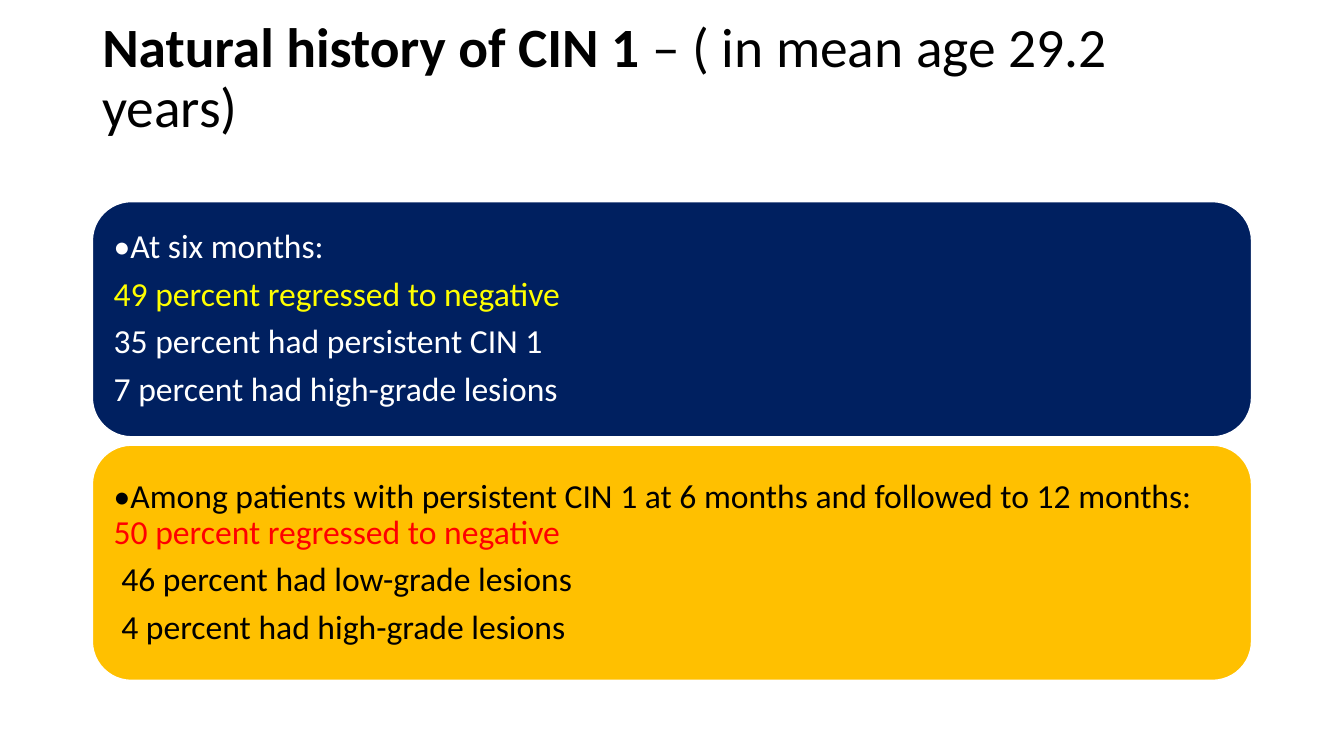
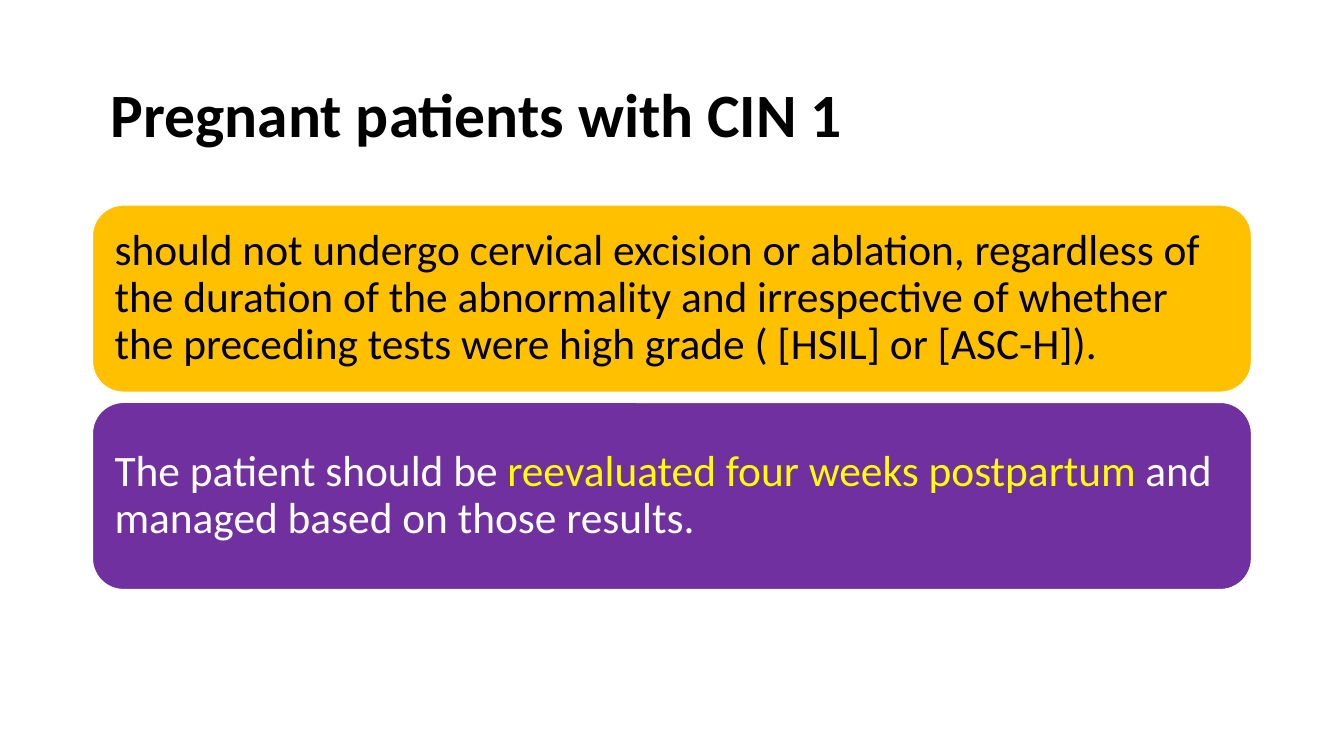
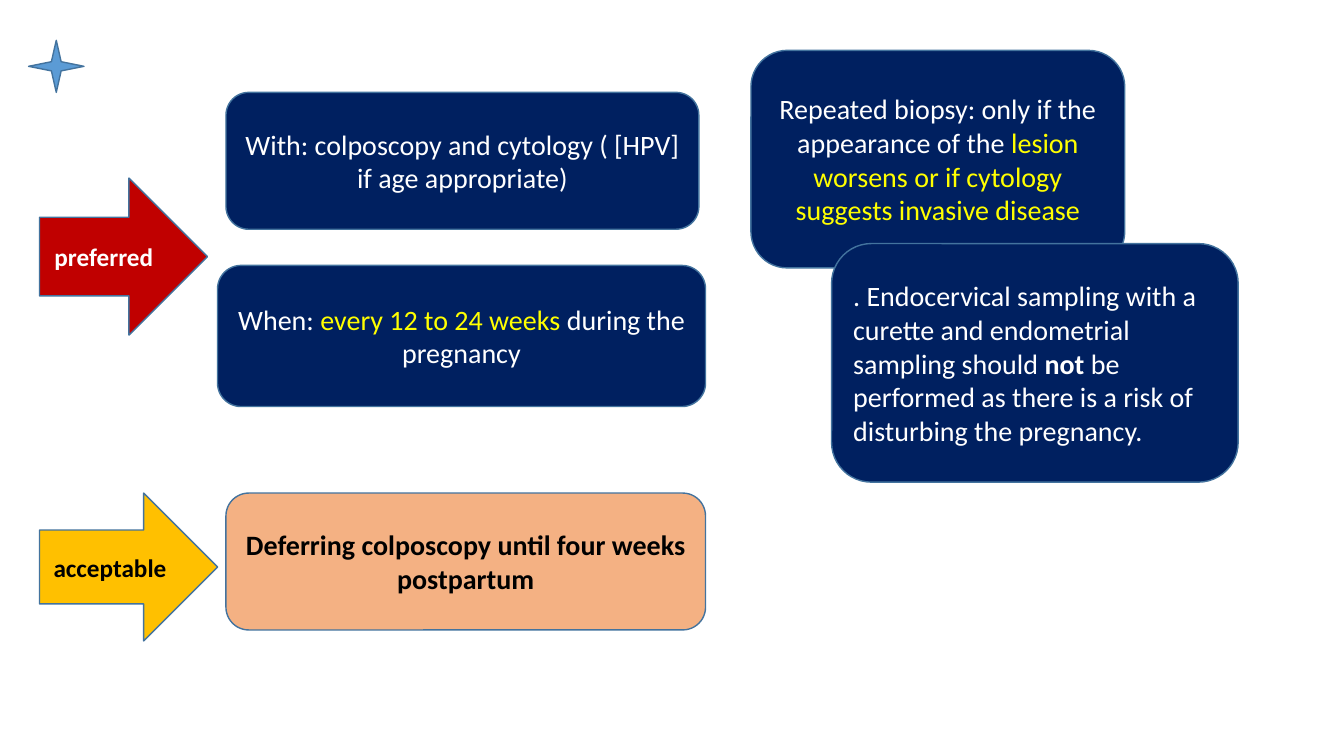
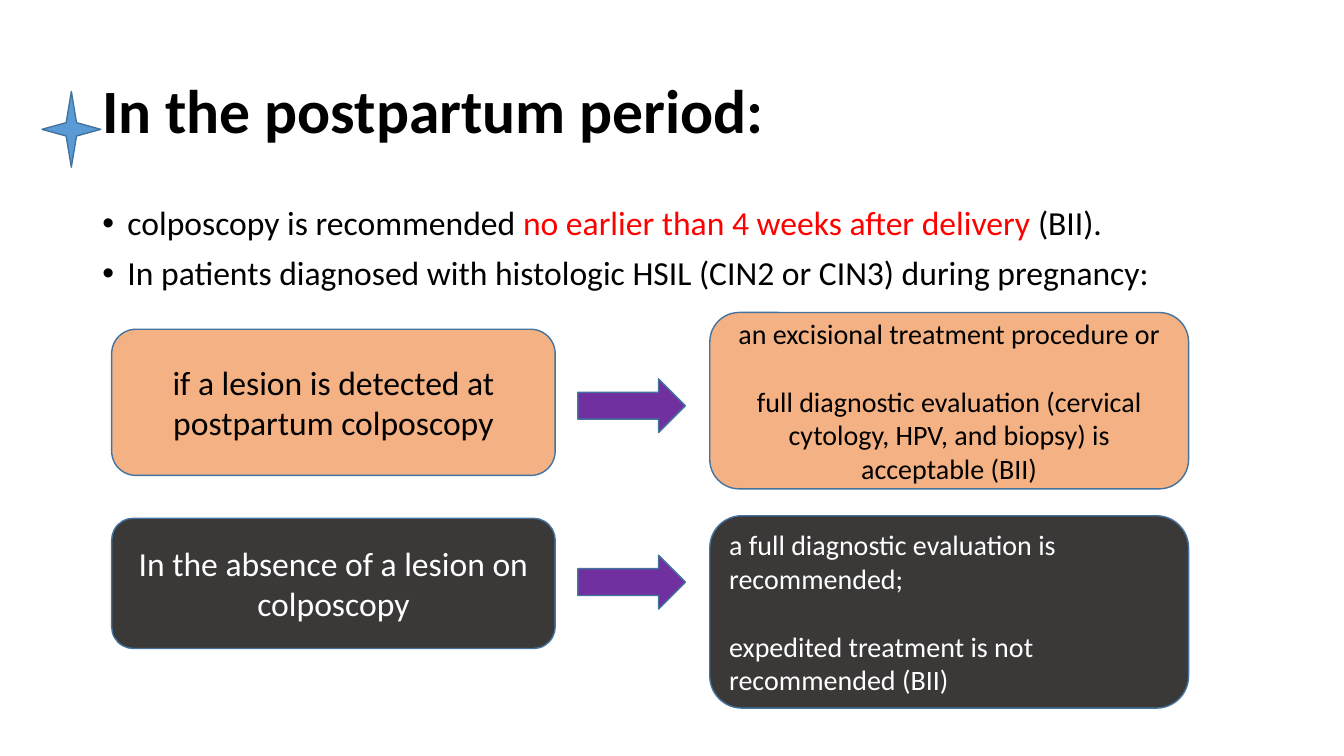
import pptx
import pptx.util
import pptx.dml.color
import pptx.enum.shapes
import pptx.enum.text
import pptx.oxml
import pptx.oxml.ns

# Shared look: a grid of 160 columns by 90 rows, twelve cells to the inch
COLUMNS, ROWS = 160, 90
CELL = pptx.util.Inches(1) / 12
FONT = "Calibri"
COLORS = {
    "black": "000000", "white": "FFFFFF", "yellow": "FFFF00", "red": "FF0000",
    "navy": "002060", "gold": "FFC000", "purple": "7030A0", "crimson": "C00000",
    "peach": "F4B183", "charcoal": "3B3838", "sky": "5B9BD5", "outline": "43739E",
}
SHAPE = pptx.enum.shapes.MSO_SHAPE
ALIGN = pptx.enum.text.PP_ALIGN
LEFT, WIDTH = 11, 138
TITLE_HEIGHT = 17.4

# Content: a paragraph is a list of spans; a span is text or (text, colour or "bold")
HISTORY_TITLE = [("Natural history of CIN 1", "bold"), " – ( in mean age 29.2 years)"]
HISTORY_CARDS = [
    ("navy", "white", [
        ["•At six months:"],
        [("49 percent regressed to negative", "yellow")],
        ["35 percent had persistent CIN 1"],
        ["7 percent had high-grade lesions"],
    ]),
    ("gold", "black", [
        ["•Among patients with persistent CIN 1 at 6 months and followed to 12 months: ",
         ("50 percent regressed to negative", "red")],
        [" 46 percent had low-grade lesions"],
        [" 4 percent had high-grade lesions"],
    ]),
]

PREGNANT_TITLE = [("Pregnant patients with CIN 1", "bold")]
PREGNANT_CARDS = [
    ("gold", "black", [
        ["should not undergo cervical excision or ablation, regardless of the duration "
         "of the abnormality and irrespective of whether the preceding tests were high "
         "grade ( [HSIL] or [ASC-H])."],
    ]),
    ("purple", "white", [
        ["The patient should be ", ("reevaluated four weeks postpartum ", "yellow"),
         "and managed based on those results."],
    ]),
]

# Options: (place, fill, text colour, alignment, spans)
OPTION_ARROWS = [
    ((4.7, 21.2, 20, 18.7), "crimson", "white", "preferred"),
    ((4.7, 58.7, 21.2, 17.6), "gold", "black", "acceptable"),
]
OPTION_BOXES = [
    ((26.9, 11, 56.3, 16.3), "navy", "white", ALIGN.CENTER,
     ["With: colposcopy and cytology ( [HPV] if age appropriate)"]),
    ((25.9, 31.6, 58.1, 16.8), "navy", "white", ALIGN.CENTER,
     ["When: ", ("every 12 to 24 weeks ", "yellow"), "during the pregnancy"]),
    ((89.4, 6, 44.5, 25.9), "navy", "white", ALIGN.CENTER,
     ["Repeated biopsy: only if the appearance of the ",
      ("lesion worsens or if cytology suggests invasive disease", "yellow")]),
    ((99, 29, 48.4, 28.4), "navy", "white", ALIGN.LEFT,
     [". Endocervical sampling with a curette and endometrial sampling should ",
      ("not", "bold"),
      " be performed as there is a risk of disturbing the pregnancy."]),
    ((26.9, 58.7, 57.1, 16.3), "peach", "black", ALIGN.CENTER,
     [("Deferring colposcopy until four weeks postpartum", "bold")]),
]

POSTPARTUM_TITLE = [("In the postpartum period:", "bold")]
POSTPARTUM_BULLETS = [
    ["colposcopy is recommended ", ("no earlier than 4 weeks after delivery ", "red"),
     "(BII)."],
    ["In patients diagnosed with histologic HSIL (CIN2 or CIN3) during pregnancy:"],
]
# Each finding leads to an action; rows are (top, height)
POSTPARTUM_ROWS = [
    {"fill": "peach", "ink": "black", "align": ALIGN.CENTER, "arrow_top": 45.1,
     "finding_rows": (39.2, 17.4), "action_rows": (37.2, 21),
     "finding": ["if a lesion is detected at postpartum colposcopy"],
     "action": [["an excisional treatment procedure or"],
                ["full diagnostic evaluation (cervical cytology, HPV, and biopsy) "
                 "is acceptable (BII)"]]},
    {"fill": "charcoal", "ink": "white", "align": ALIGN.LEFT, "arrow_top": 66.1,
     "finding_rows": (61.7, 15.5), "action_rows": (61.4, 22.9),
     "finding": ["In the absence of a lesion on colposcopy"],
     "action": [["a full diagnostic evaluation is recommended;"],
                ["expedited treatment is not recommended (BII)"]]},
]


def rgb(name):
    return pptx.dml.color.RGBColor.from_string(COLORS[name])


def cells(place):
    return [round(value * CELL) for value in place]


def write(box, paragraphs, size, ink, align=ALIGN.LEFT, line=1.0, before=0, after=0,
          bullet=False):
    """Fill a box with paragraphs; space before skips the first unless bulleted."""
    frame = box.text_frame
    frame.word_wrap = True
    for index, spans in enumerate(paragraphs):
        para = frame.add_paragraph() if index else frame.paragraphs[0]
        para.alignment = align
        para.line_spacing = line
        para.space_before = pptx.util.Pt(before if index or bullet else 0)
        para.space_after = pptx.util.Pt(after)
        if bullet:
            properties = para._p.get_or_add_pPr()
            indent = pptx.util.Inches(0.25)
            properties.set("marL", str(indent))
            properties.set("indent", str(-indent))
            for tag, key, value in (("a:buFont", "typeface", "Arial"),
                                    ("a:buChar", "char", "•")):
                mark = pptx.oxml.parse_xml(
                    f'<{tag} {pptx.oxml.ns.nsdecls("a")} {key}="{value}"/>')
                properties.append(mark)
        for item in spans:
            text, style = (item, ink) if isinstance(item, str) else item
            span = para.add_run()
            span.text = text
            span.font.name = FONT
            span.font.size = pptx.util.Pt(size)
            span.font.bold = style == "bold"
            span.font.color.rgb = rgb(ink if style == "bold" else style)


def add_figure(page, kind, place, fill, outline="outline"):
    figure = page.shapes.add_shape(kind, *cells(place))
    figure.shadow.inherit = False
    figure.fill.solid()
    figure.fill.fore_color.rgb = rgb(fill)
    figure.line.color.rgb = rgb(outline)
    figure.line.width = pptx.util.Pt(1)
    return figure


def add_title(page, spans, top, left=LEFT, size=44):
    box = page.shapes.add_textbox(*cells((left, top, WIDTH, TITLE_HEIGHT)))
    box.text_frame.vertical_anchor = pptx.enum.text.MSO_ANCHOR.MIDDLE
    write(box, [spans], size, "black", line=0.9)


def add_cards(page, cards, top, height, gap, size, inset, after):
    """Stack full-width rounded cards."""
    for index, (fill, ink, paragraphs) in enumerate(cards):
        place = (LEFT, top + index * (height + gap), WIDTH, height)
        card = add_figure(page, SHAPE.ROUNDED_RECTANGLE, place, fill, "white")
        frame = card.text_frame
        frame.margin_left = frame.margin_right = pptx.util.Inches(inset)
        frame.margin_top = frame.margin_bottom = pptx.util.Inches(inset)
        write(card, paragraphs, size, ink, line=0.9, after=after)


def build_history(page):
    add_title(page, HISTORY_TITLE, top=0.8, size=39.6)
    add_cards(page, HISTORY_CARDS, top=24, height=28, gap=1, size=24, inset=0.1, after=8)


def build_pregnant(page):
    add_title(page, PREGNANT_TITLE, top=5.3, left=12)
    add_cards(page, PREGNANT_CARDS, top=24.4, height=22.3, gap=1.2, size=31, inset=0.13,
              after=10)


def build_options(page):
    for place, fill, ink, label in OPTION_ARROWS:
        arrow = add_figure(page, SHAPE.RIGHT_ARROW, place, fill)
        write(arrow, [[(label, "bold")]], 18, ink, ALIGN.CENTER)
    for place, fill, ink, align, spans in OPTION_BOXES:
        box = add_figure(page, SHAPE.ROUNDED_RECTANGLE, place, fill)
        write(box, [spans], 20, ink, align)
    add_figure(page, SHAPE.STAR_4_POINT, (3.4, 4.8, 6.6, 6.2), "sky")


def build_postpartum(page):
    add_title(page, POSTPARTUM_TITLE, top=4.8)
    body = page.shapes.add_textbox(*cells((LEFT, 24, WIDTH, 57)))
    write(body, POSTPARTUM_BULLETS, 24, "black", line=0.9, before=10, bullet=True)
    for row in POSTPARTUM_ROWS:
        top, height = row["finding_rows"]
        finding = add_figure(page, SHAPE.ROUNDED_RECTANGLE, (13.3, top, 52.8, height),
                             row["fill"])
        write(finding, [row["finding"]], 24, row["ink"], ALIGN.CENTER)
        top, height = row["action_rows"]
        action = add_figure(page, SHAPE.ROUNDED_RECTANGLE, (84.5, top, 57, height),
                            row["fill"])
        write(action, row["action"], 20, row["ink"], row["align"], before=24.4)
        add_figure(page, SHAPE.RIGHT_ARROW, (68.8, row["arrow_top"], 12.8, 6.4), "purple")
    add_figure(page, SHAPE.STAR_4_POINT, (5, 10.9, 7, 9), "sky")


def main():
    deck = pptx.Presentation()
    deck.slide_width, deck.slide_height = cells((COLUMNS, ROWS))
    blank = deck.slide_layouts[6]
    for build in (build_history, build_pregnant, build_options, build_postpartum):
        build(deck.slides.add_slide(blank))
    deck.save("out.pptx")


if __name__ == "__main__":
    main()
